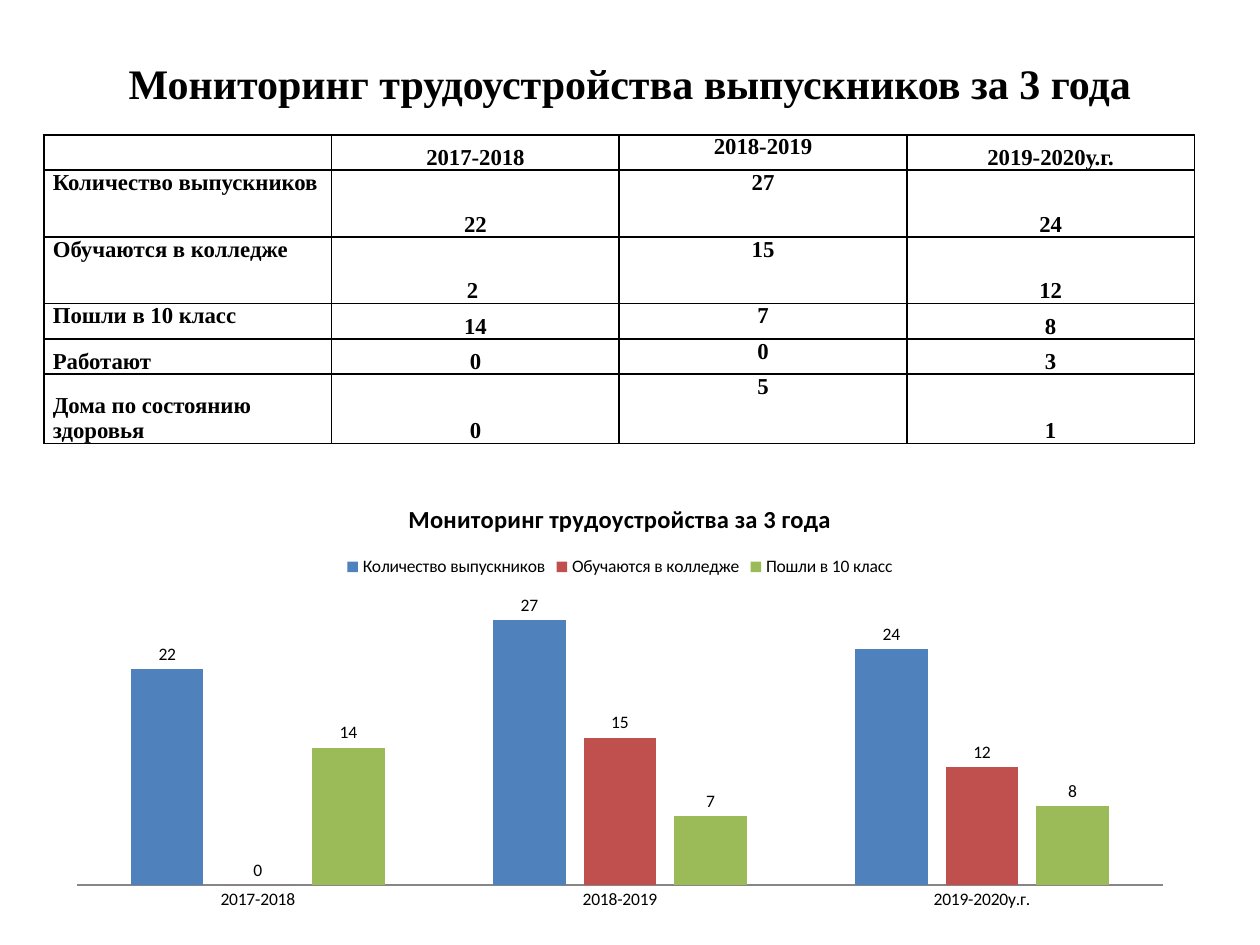
from pptx import Presentation
from pptx.chart.data import CategoryChartData
from pptx.dml.color import RGBColor
from pptx.enum.chart import (XL_CHART_TYPE, XL_LABEL_POSITION,
                             XL_LEGEND_POSITION, XL_TICK_MARK)
from pptx.enum.text import MSO_ANCHOR, PP_ALIGN
from pptx.oxml.ns import qn
from pptx.util import Inches, Pt
from lxml import etree

BLACK = RGBColor(0x00, 0x00, 0x00)
GRAY = RGBColor(0x86, 0x86, 0x86)
SERIES_COLORS = [RGBColor(0x4F, 0x81, 0xBD), RGBColor(0xC0, 0x50, 0x4D),
                 RGBColor(0x9B, 0xBB, 0x59)]
TOP, MIDDLE, BOTTOM = MSO_ANCHOR.TOP, MSO_ANCHOR.MIDDLE, MSO_ANCHOR.BOTTOM
LEFT, CENTER = PP_ALIGN.LEFT, PP_ALIGN.CENTER

YEARS = ["2017-2018", "2018-2019", "2019-2020у.г."]
TABLE_ROWS = [
    ["", *YEARS],
    ["Количество выпускников", "22", "27", "24"],
    ["Обучаются в колледже", "2 ", "15", "12"],
    ["Пошли в 10 класс", "14", "7", "8"],
    ["Работают", "0", "0", "3"],
    ["Дома по состоянию здоровья", "0", "5", "1"],
]
ROW_HEIGHTS = [0.28, 0.53, 0.53, 0.28, 0.28, 0.55]
FIRST_BOTTOM_LABEL_ROW = 4
CHART_SERIES = {
    "Количество выпускников": [22, 27, 24],
    "Обучаются в колледже": [0, 15, 12],
    "Пошли в 10 класс": [14, 7, 8],
}


def style_font(font, name, size, bold=False):
    font.name = name
    font.size = Pt(size)
    font.bold = bold
    font.color.rgb = BLACK


def add_title(slide, left, top, width, height):
    frame = slide.shapes.add_textbox(left, top, width, height).text_frame
    frame.word_wrap = True
    frame.vertical_anchor = MIDDLE
    frame.margin_bottom = Inches(0.42)
    paragraph = frame.paragraphs[0]
    paragraph.text = "Мониторинг трудоустройства выпускников за 3 года"
    paragraph.alignment = CENTER
    style_font(paragraph.font, "Times New Roman", 24, bold=True)


def add_borders(cell):
    properties = cell._tc.get_or_add_tcPr()
    for position, side in enumerate(("lnL", "lnR", "lnT", "lnB")):
        line = etree.Element(qn(f"a:{side}"), w=str(Pt(1)))
        fill = etree.SubElement(line, qn("a:solidFill"))
        etree.SubElement(fill, qn("a:srgbClr"), val=str(BLACK))
        properties.insert(position, line)


def cell_anchor(row, column):
    """Labels sit at the top except in the last rows; 2018-2019 is always at the top."""
    if column == 0:
        return BOTTOM if row >= FIRST_BOTTOM_LABEL_ROW else TOP
    return TOP if column == 2 else BOTTOM


def fill_cell(cell, text, row, column):
    cell.fill.background()
    cell.margin_left = cell.margin_right = Inches(0.07)
    cell.margin_top = cell.margin_bottom = 0
    cell.vertical_anchor = cell_anchor(row, column)
    paragraph = cell.text_frame.paragraphs[0]
    paragraph.alignment = CENTER if column else LEFT
    if text:
        paragraph.text = text
    else:
        etree.SubElement(paragraph._p, qn("a:endParaRPr"), sz="1300")
    style_font(paragraph.font, "Times New Roman", 13, bold=True)
    add_borders(cell)


def add_results_table(slide, left, top, width, height):
    column_count = len(TABLE_ROWS[0])
    table = slide.shapes.add_table(len(TABLE_ROWS), column_count,
                                   left, top, width, height).table
    table.first_row = table.horz_banding = False
    for column in table.columns:
        column.width = width // column_count
    for row, (texts, row_height) in enumerate(zip(TABLE_ROWS, ROW_HEIGHTS)):
        table.rows[row].height = Inches(row_height)
        for column, text in enumerate(texts):
            fill_cell(table.cell(row, column), text, row, column)


def add_results_chart(slide, left, top, width, height):
    data = CategoryChartData()
    data.categories = YEARS
    for name, values in CHART_SERIES.items():
        data.add_series(name, values)
    chart = slide.shapes.add_chart(XL_CHART_TYPE.COLUMN_CLUSTERED,
                                   left, top, width, height, data).chart
    style_font(chart.font, "Calibri", 10)

    title = chart.chart_title.text_frame
    title.text = "Мониторинг трудоустройства за 3 года"
    style_font(title.paragraphs[0].font, "Calibri", 14, bold=True)
    chart.has_legend = True
    chart.legend.position = XL_LEGEND_POSITION.TOP
    chart.legend.include_in_layout = False

    chart.value_axis.visible = False
    chart.value_axis.has_major_gridlines = False
    chart.category_axis.major_tick_mark = XL_TICK_MARK.NONE
    chart.category_axis.format.line.color.rgb = GRAY

    plot = chart.plots[0]
    plot.gap_width = 150
    plot.overlap = -25
    plot.vary_by_categories = False
    for series, color in zip(plot.series, SERIES_COLORS):
        series.format.fill.solid()
        series.format.fill.fore_color.rgb = color
        series.data_labels.show_value = True
        series.data_labels.position = XL_LABEL_POSITION.OUTSIDE_END


def main():
    presentation = Presentation()
    presentation.slide_width = Inches(10)
    presentation.slide_height = Inches(7.5)
    slide = presentation.slides.add_slide(presentation.slide_layouts[6])
    add_title(slide, Inches(0.5), Inches(0.3), Inches(9), Inches(1.09))
    add_results_table(slide, Inches(0.35), Inches(1.07), Inches(9.13), Inches(2.45))
    add_results_chart(slide, Inches(0.43), Inches(3.83), Inches(8.98), Inches(3.46))
    presentation.save("out.pptx")


if __name__ == "__main__":
    main()
